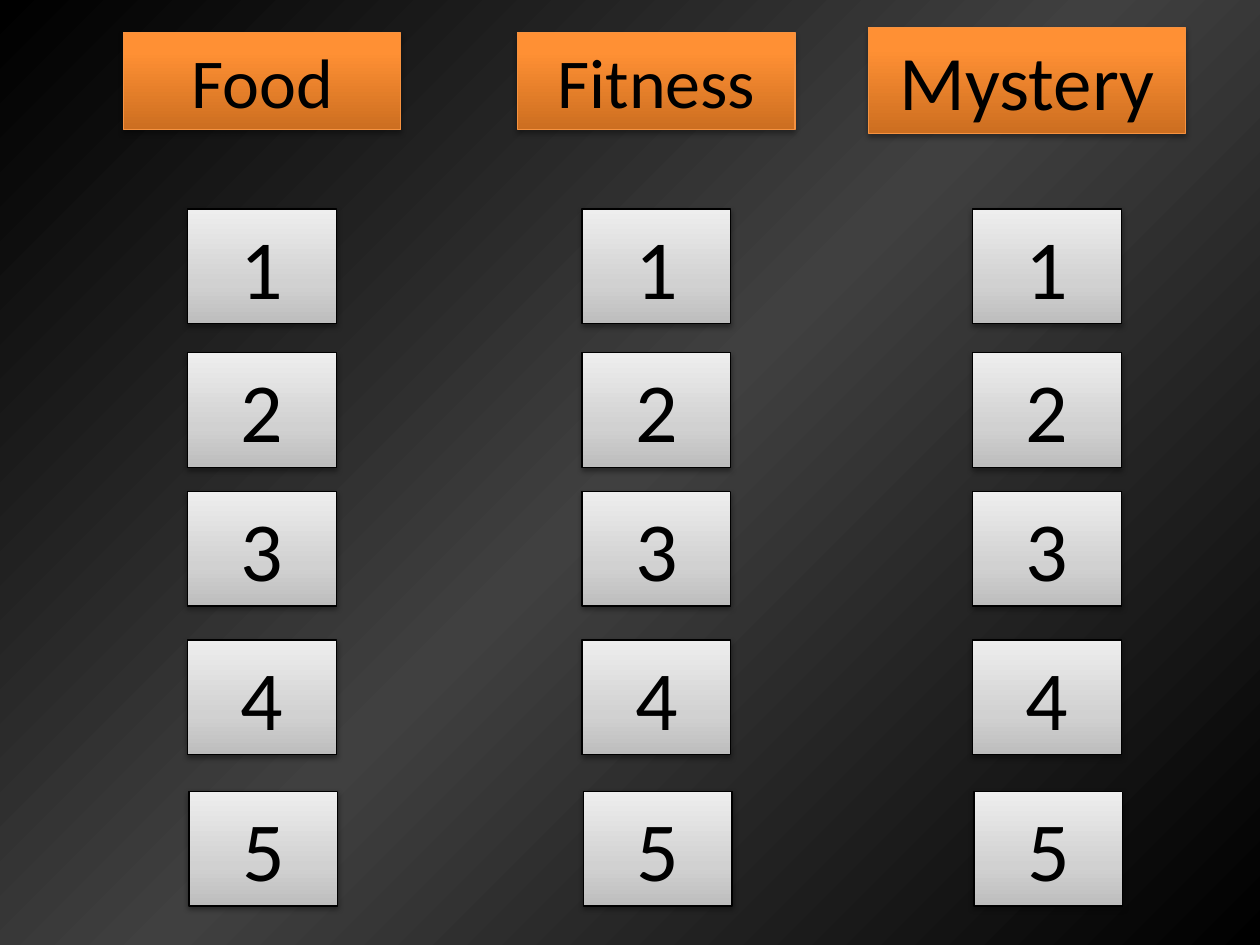
"""Build a game board with three category headers over numbered tiles."""
from lxml import etree
from pptx import Presentation
from pptx.dml.color import RGBColor
from pptx.enum import shapes, text
from pptx.oxml import parse_xml
from pptx.oxml.ns import nsdecls, qn
from pptx.util import Inches, Pt


def set_gradient(parent, stops, direction):
    """Replace the solid fill of parent with a gradient."""
    gs = "".join(f'<a:gs pos="{pos * 1000}"><a:srgbClr val="{color}"/></a:gs>' for pos, color in stops)
    xml = f'<a:gradFill {nsdecls("a")} rotWithShape="1"><a:gsLst>{gs}</a:gsLst>{direction}</a:gradFill>'
    parent.replace(parent.find(qn("a:solidFill")), parse_xml(xml))


def add_box(s, label, left, top, width, height, size, stops, line, alpha, dist):
    """Add a shaded, shadowed rectangle with a centred label."""
    sp = s.shapes.add_shape(shapes.MSO_SHAPE.RECTANGLE, Inches(left), Inches(top), Inches(width), Inches(height))
    sp.fill.solid()
    set_gradient(sp.element.spPr, stops, '<a:lin ang="16200000" scaled="0"/>')
    sp.line.color.rgb = RGBColor.from_string(line)
    sp.line.width = Pt(0.75)
    sp.shadow.inherit = False
    effects = sp.element.spPr.find(qn("a:effectLst"))
    shadow = etree.SubElement(effects, qn("a:outerShdw"), blurRad=str(Pt(3.1)), dist=str(Pt(dist)),
                              dir="5400000", rotWithShape="0")
    color = etree.SubElement(shadow, qn("a:srgbClr"), val="000000")
    etree.SubElement(color, qn("a:alpha"), val=str(alpha * 1000))
    tf = sp.text_frame
    tf.word_wrap = True
    tf.auto_size = text.MSO_AUTO_SIZE.SHAPE_TO_FIT_TEXT
    tf.vertical_anchor = text.MSO_ANCHOR.TOP
    p = tf.paragraphs[0]
    p.alignment = text.PP_ALIGN.CENTER
    r = p.add_run()
    r.text = label
    r.font.name = "Calibri"
    r.font.size = Pt(size)
    r.font.color.rgb = RGBColor.from_string("000000")


prs = Presentation()
prs.slide_width, prs.slide_height = Inches(10), Inches(7.5)
s = prs.slides.add_slide(prs.slide_layouts[6])

s.background.fill.solid()
set_gradient(s.element.find(".//" + qn("p:bgPr")), [(0, "000000"), (50, "404040"), (100, "000000")],
             '<a:path path="circle"><a:fillToRect l="100000" t="100000"/></a:path>'
             '<a:tileRect r="-100000" b="-100000"/>')

orange = dict(stops=[(0, "CC6E20"), (80, "FF9034"), (100, "FF9136")], line="F69240", alpha=35, dist=1.8)
grey = dict(stops=[(0, "BDBDBD"), (35, "D1D1D1"), (100, "EEEEEE")], line="000000", alpha=38, dist=1.6)

headers = [("Food", 0.98, 0.26, 2.2, 0.77, 40),
           ("Fitness", 4.11, 0.26, 2.2, 0.77, 40),
           ("Mystery", 6.89, 0.22, 2.52, 0.84, 44)]
for header in headers:
    add_box(s, *header, **orange)

for left in (1.49, 4.62, 7.72):
    for number, top in enumerate((1.66, 2.8, 3.9, 5.08, 6.28), 1):
        shift = 0.01 if number == 5 else 0
        add_box(s, str(number), left + shift, top, 1.18, 0.91, 48, **grey)

prs.save("out.pptx")
